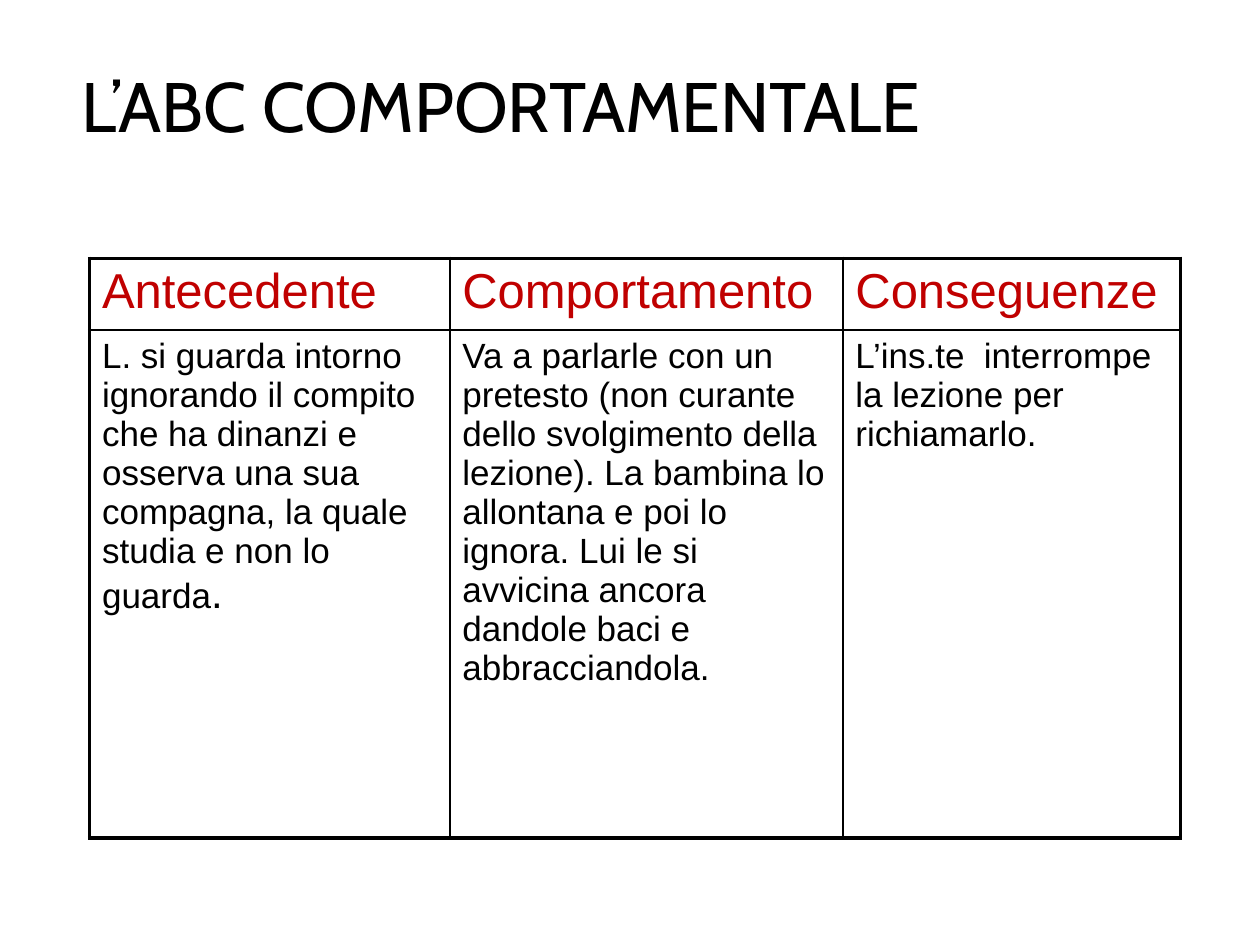
from typing import NamedTuple

from lxml.etree import SubElement
from pptx import Presentation
from pptx.dml.color import RGBColor as RGB
from pptx.enum.text import MSO_ANCHOR as Anchor, PP_ALIGN as Align
from pptx.oxml.ns import qn
from pptx.util import Inches, Pt

BLACK, RED = "000000", "C00000"
THIN, THICK = 1, 2.25
ROWS = (0.57, 4.03)


class Column(NamedTuple):
    width: float
    head: str
    body: str
    end: str = ""


COLUMNS = (
    Column(2.86, "Antecedente",
           "L. si guarda intorno ignorando il compito che ha dinanzi e osserva "
           "una sua compagna, la quale studia e non lo guarda", "."),
    Column(3.12, "Comportamento",
           "Va a parlarle con un pretesto (non curante dello svolgimento della "
           "lezione). La bambina lo allontana e poi lo ignora. Lui le si "
           "avvicina ancora dandole baci e abbracciandola."),
    Column(2.68, "Conseguenze",
           "L’ins.te  interrompe la lezione per richiamarlo."),
)


def color(code: str) -> RGB:
    return RGB.from_string(code)


def write(para, text: str, *, size: float, font: str = "Arial",
          fill: str = BLACK) -> None:
    run = para.add_run()
    run.text = text
    run.font.size = Pt(size)
    run.font.name = font
    run.font.bold = False
    run.font.color.rgb = color(fill)


def border(cell, side: str, width: float) -> None:
    props = cell._tc.get_or_add_tcPr()
    line = SubElement(props, qn(f"a:ln{side}"), w=str(int(Pt(width))))
    SubElement(SubElement(line, qn("a:solidFill")), qn("a:srgbClr"), val=BLACK)


def frame(cell, row: int, col: int) -> None:
    """Thick lines on the table's outer edges, thin ones inside."""
    edges = {"L": col == 0, "R": col == len(COLUMNS) - 1,
             "T": row == 0, "B": row == len(ROWS) - 1}
    for side, outer in edges.items():
        border(cell, side, THICK if outer else THIN)
    cell.fill.background()


def add_title(slide) -> None:
    title = slide.shapes.title
    title.left, title.top = Inches(0.55), Inches(0.25)
    title.width, title.height = Inches(8.5), Inches(1.25)
    title.text_frame.vertical_anchor = Anchor.MIDDLE
    para = title.text_frame.paragraphs[0]
    para.alignment = Align.LEFT
    para.line_spacing = 0.9
    write(para, "L’ABC COMPORTAMENTALE", size=40, font="Cabin")


def add_grid(slide) -> None:
    width = sum(column.width for column in COLUMNS)
    table = slide.shapes.add_table(
        len(ROWS), len(COLUMNS), Inches(0.71), Inches(2.05),
        Inches(width), Inches(sum(ROWS))).table
    table.first_row = table.horz_banding = False
    for row, height in zip(table.rows, ROWS):
        row.height = Inches(height)
    for col, column in enumerate(COLUMNS):
        table.columns[col].width = Inches(column.width)
        head, body = (table.cell(row, col) for row in range(len(ROWS)))
        write(head.text_frame.paragraphs[0], column.head, size=28, fill=RED)
        para = body.text_frame.paragraphs[0]
        write(para, column.body, size=20)
        if column.end:
            write(para, column.end, size=24)
        for row, cell in enumerate((head, body)):
            frame(cell, row, col)


def main() -> None:
    deck = Presentation()
    deck.slide_width, deck.slide_height = Inches(10), Inches(7.5)
    slide = deck.slides.add_slide(deck.slide_layouts[5])
    add_title(slide)
    add_grid(slide)
    deck.save("out.pptx")


if __name__ == "__main__":
    main()
